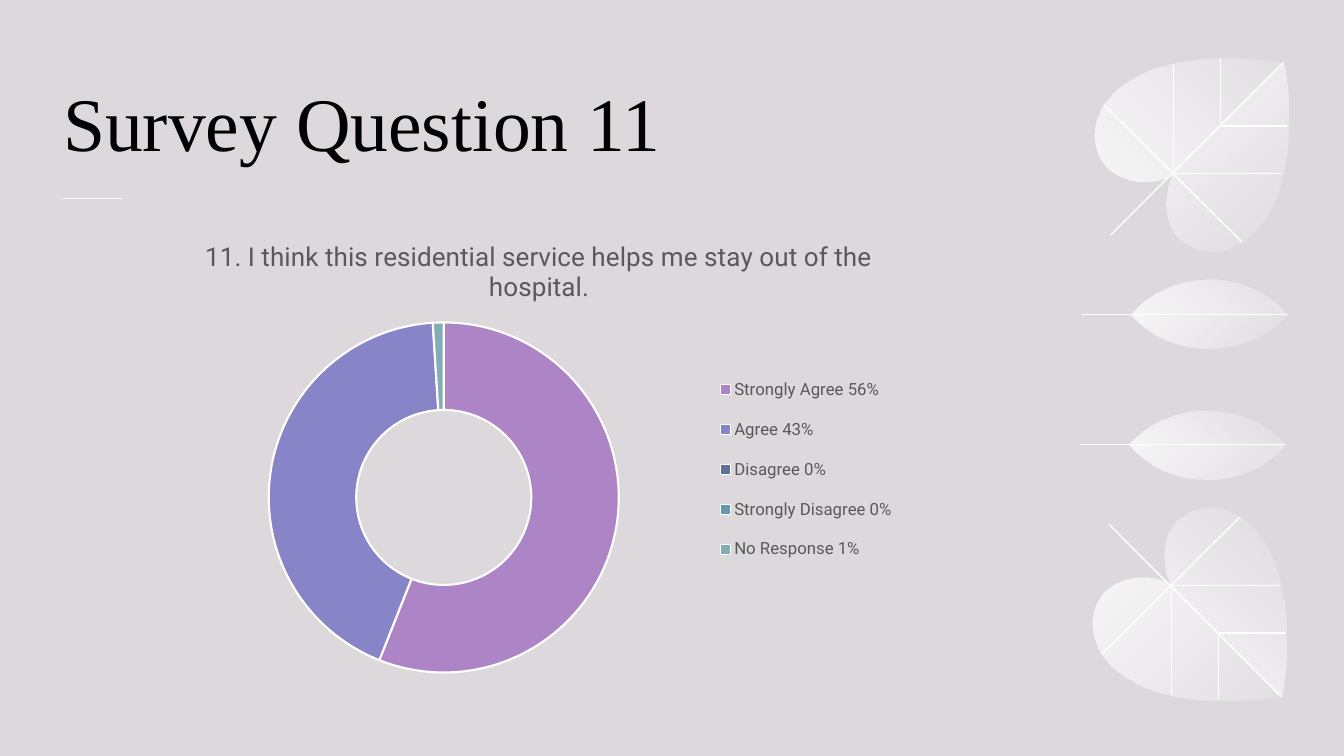
"""Build the Survey Question 11 slide with its doughnut chart and leaf border."""
from lxml import etree
from pptx import Presentation
from pptx.chart.data import CategoryChartData
from pptx.dml.color import RGBColor
from pptx.enum import chart as charts, shapes, text
from pptx.oxml import parse_xml
from pptx.oxml.ns import nsdecls, qn
from pptx.util import Pt

QUESTION = "11. I think this residential service helps me stay out of the hospital."
ANSWERS = [
    ("Strongly Agree 56%", 56, "AD84C6"),
    ("Agree 43%", 43, "8784C7"),
    ("Disagree 0%", 0, "5D739A"),
    ("Strongly Disagree 0%", 0, "6997AF"),
    ("No Response 1%", 1, "84ACB6"),
]
HEART_LINES = [
    [(916.5, 44.6), (793.5, 167.8)],
    [(788.4, 74.9), (887, 172.8)],
    [(915.8, 123.8), (838, 123.8), (838, 46)],
    [(919.4, 90), (871.9, 90), (871.9, 41.8)],
]
STEM = [(772.6, 224.6), (919.4, 224.6)]
LEAVES = [
    ([(916.6, 45.4), (836.6, 125.3), (828.7, 128.2),
      (812.9, 131.8, 799.9, 127.4, 791.3, 119.5),
      (790.6, 118.8, 789.1, 117.4, 788.4, 115.9),
      (768.2, 89.3, 792.7, 31.7, 903.6, 43.2)], -45, 20),
    ([(916.6, 44.6), (918.7, 57.6),
      (930.2, 168.5, 872.6, 193.7, 846, 172.8),
      (835.2, 165.6, 830.2, 151.2, 834.5, 132.5),
      (837.4, 124.6), (836.6, 125.3)], 45, 10),
    ([(863.3, 199.4), (841.7, 199.4, 821.5, 208.8, 807.8, 224.6),
      (919.4, 224.6), (905.8, 208.8, 886.3, 199.4, 863.3, 199.4)], -45, 20),
    ([(919.4, 224.6), (807.8, 224.6),
      (821.5, 239.8, 841.7, 249.1, 863.3, 249.1),
      (886.3, 249.1, 905.8, 239.8, 919.4, 224.6)], 45, 10),
]


def color(value):
    """Turn a hex string into a colour."""
    return RGBColor.from_string(value)


def style_font(font, size, value, name="Roboto"):
    """Set size, colour and typeface of a font."""
    font.size, font.name, font.bold = Pt(size), name, False
    font.color.rgb = color(value)


def style_line(line, width=1):
    """Make a line white."""
    line.color.rgb = color("FFFFFF")
    line.width = Pt(width)


def place(outline, mirrored):
    """Reflect corners and curves into the lower half of the border when asked."""
    if not mirrored:
        return outline
    return [tuple(542.2 - value if index % 2 else value - 1.4
                  for index, value in enumerate(part)) for part in outline]


def add_outline(page, outline, closed):
    """Add a freeform of corners (x, y) and Bezier curves (x1, y1, x2, y2, x, y)."""
    ends = [(Pt(part[-2]), Pt(part[-1])) for part in outline]
    builder = page.shapes.build_freeform(*ends[0])
    builder.add_line_segments(ends[1:], close=closed)
    shape = builder.convert_to_shape()
    shape.shadow.inherit = False
    segments = list(shape.element.spPr.iter(qn("a:lnTo")))
    for part, segment in zip(outline[1:], segments):
        if len(part) == 6:
            points = "".join(
                f'<a:pt x="{Pt(x) - shape.left}" y="{Pt(y) - shape.top}"/>'
                for x, y in zip(part[::2], part[1::2]))
            curve = parse_xml(f'<a:cubicBezTo {nsdecls("a")}>{points}</a:cubicBezTo>')
            segment.getparent().replace(segment, curve)
    return shape


def add_line(page, points):
    """Add a white line, straight or bent."""
    if len(points) == 2:
        (x1, y1), (x2, y2) = points
        line = page.shapes.add_connector(
            shapes.MSO_CONNECTOR.STRAIGHT, Pt(x1), Pt(y1), Pt(x2), Pt(y2))
        etree.SubElement(line.element.spPr, qn("a:effectLst"))
    else:
        line = add_outline(page, points, False)
        line.fill.background()
    style_line(line.line)


def add_leaf(page, outline, angle, end_alpha):
    """Add a leaf that fades from white to nearly clear."""
    leaf = add_outline(page, outline, True)
    leaf.line.fill.background()
    stops = "".join(
        f'<a:gs pos="{pos}"><a:srgbClr val="FFFFFF"><a:alpha val="{alpha * 1000}"/>'
        '</a:srgbClr></a:gs>' for pos, alpha in ((0, 80), (100000, end_alpha)))
    fill = parse_xml(
        f'<a:gradFill {nsdecls("a")} rotWithShape="1"><a:gsLst>{stops}</a:gsLst>'
        f'<a:lin ang="{angle % 360 * 60000}" scaled="0"/></a:gradFill>')
    leaf.element.spPr.find(qn("a:custGeom")).addnext(fill)


def add_foliage(page, mirrored):
    """Add one heart-shaped leaf and one slim leaf."""
    for points in HEART_LINES:
        add_line(page, place(points, mirrored))
    for outline, angle, end_alpha in LEAVES:
        add_leaf(page, place(outline, mirrored),
                 -angle if mirrored else angle, end_alpha)
    add_line(page, place(STEM, mirrored))


def set_title(page):
    """Fill and format the title placeholder."""
    title = page.shapes.title
    title.left, title.top, title.width, title.height = Pt(45), Pt(30), Pt(681), Pt(93.6)
    frame = title.text_frame
    frame.text = "Survey Question 11"
    frame.word_wrap = True
    frame.vertical_anchor = text.MSO_ANCHOR.BOTTOM
    frame.margin_left = 0
    para = frame.paragraphs[0]
    para.alignment = text.PP_ALIGN.LEFT
    para.line_spacing = 0.9
    style_font(para.runs[0].font, 54, "000000", "Times New Roman")


def set_layout(parent, index, x, y, width, height, target=""):
    """Place a part of the chart by fractions of the chart area."""
    for old in parent.findall(qn("c:layout")):
        parent.remove(old)
    sizes = "".join(f'<c:{tag} val="{value}"/>'
                    for tag, value in zip("xywh", (x, y, width, height)))
    parent.insert(index, parse_xml(
        f'<c:layout {nsdecls("c")}><c:manualLayout>{target}<c:xMode val="edge"/>'
        f'<c:yMode val="edge"/>{sizes}</c:manualLayout></c:layout>'))


def add_survey_chart(page):
    """Add the doughnut chart of the answers."""
    data = CategoryChartData()
    data.categories = [label for label, _, _ in ANSWERS]
    data.add_series(QUESTION, [value for _, value, _ in ANSWERS])
    chart = page.shapes.add_chart(charts.XL_CHART_TYPE.DOUGHNUT, Pt(44.6), Pt(157),
                                  Pt(681), Pt(333.4), data).chart
    style_font(chart.font, 10, "000000")
    chart.has_title = True
    chart.chart_title.text_frame.text = QUESTION
    style_font(chart.chart_title.text_frame.paragraphs[0].runs[0].font, 18.6, "595959")
    chart.has_legend = True
    chart.legend.position = charts.XL_LEGEND_POSITION.RIGHT
    chart.legend.include_in_layout = False
    style_font(chart.legend.font, 12, "595959")
    plot = chart.plots[0]
    plot.vary_by_categories = True
    plot.has_data_labels = False
    for index, (_, _, value) in enumerate(ANSWERS):
        point = plot.series[0].points[index]
        point.format.fill.solid()
        point.format.fill.fore_color.rgb = color(value)
        style_line(point.format.line, 1.5)
    area = chart.element.chart.plotArea
    area.xpath(".//c:holeSize")[0].set("val", "75")
    set_layout(area, 0, 0.21, 0.22, 0.38, 0.75, '<c:layoutTarget val="inner"/>')
    set_layout(chart.element.chart.find(qn("c:legend")), 1, 0.68, 0.3, 0.2, 0.47)


def main():
    """Build and save the slide."""
    deck = Presentation()
    deck.slide_width, deck.slide_height = Pt(960), Pt(540)
    page = deck.slides.add_slide(deck.slide_layouts[5])
    page.background.fill.solid()
    page.background.fill.fore_color.rgb = color("DCD8DC")
    add_foliage(page, False)
    add_line(page, [(45, 141.8), (87, 141.8)])
    add_foliage(page, True)
    set_title(page)
    add_survey_chart(page)
    deck.save("out.pptx")


if __name__ == "__main__":
    main()
